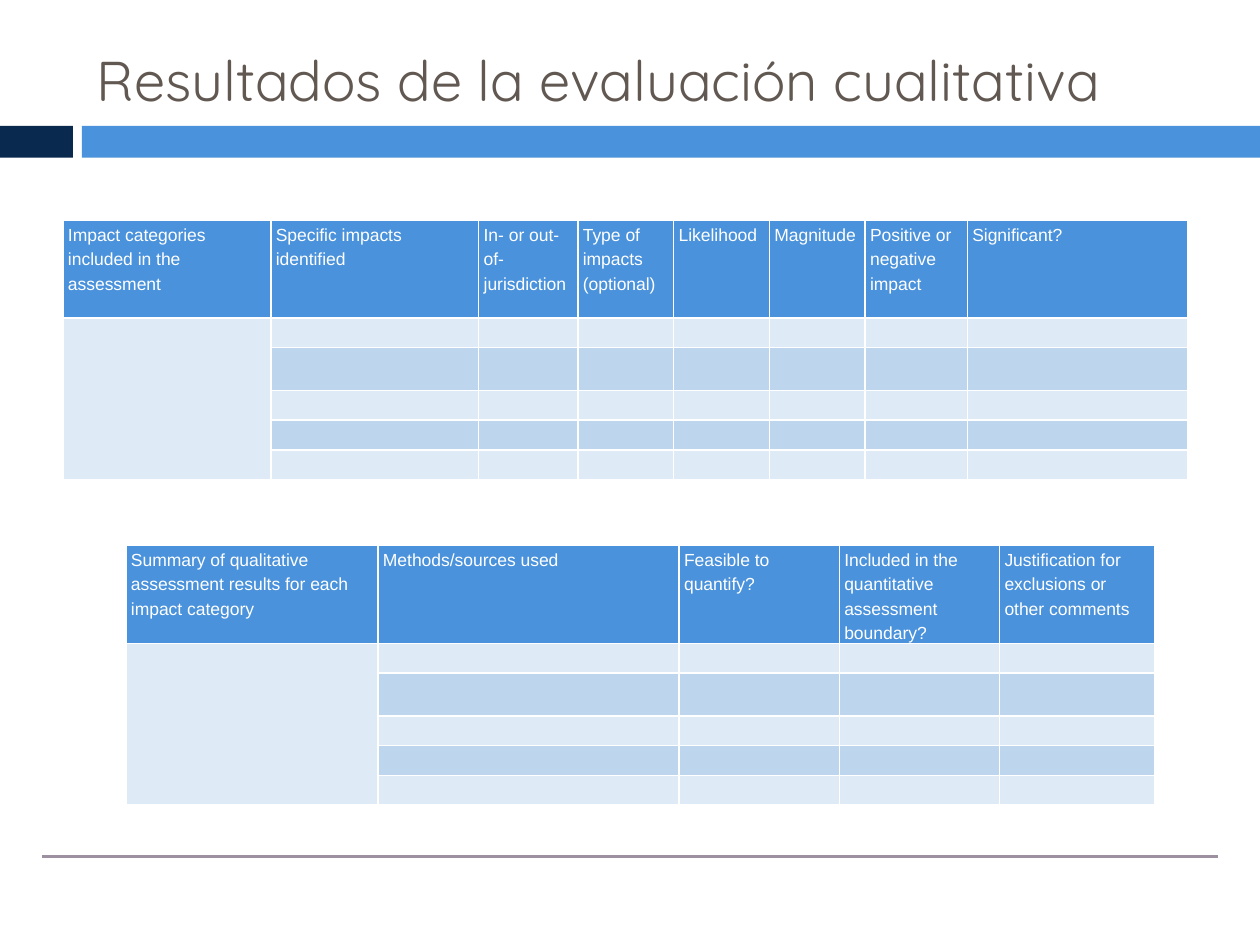
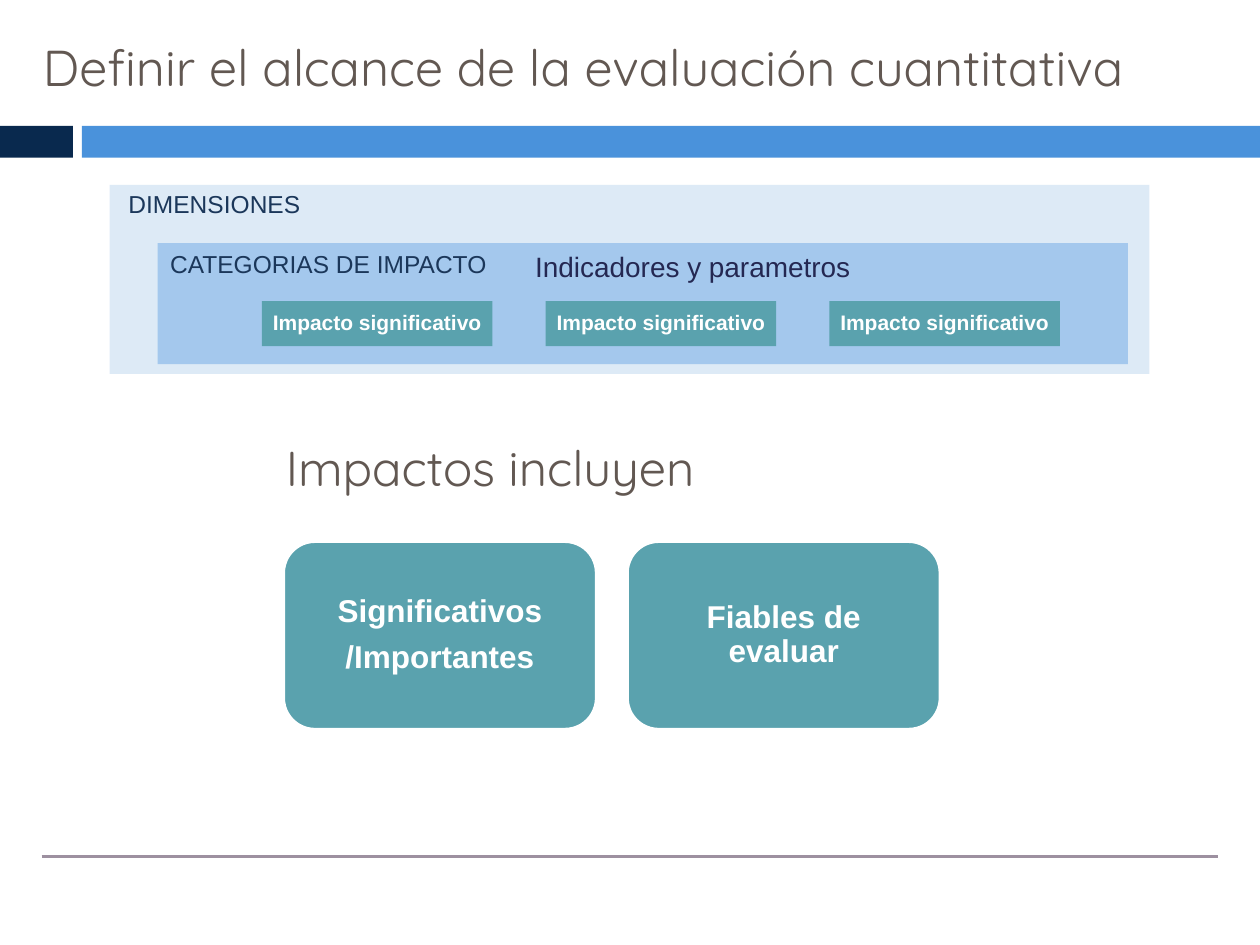
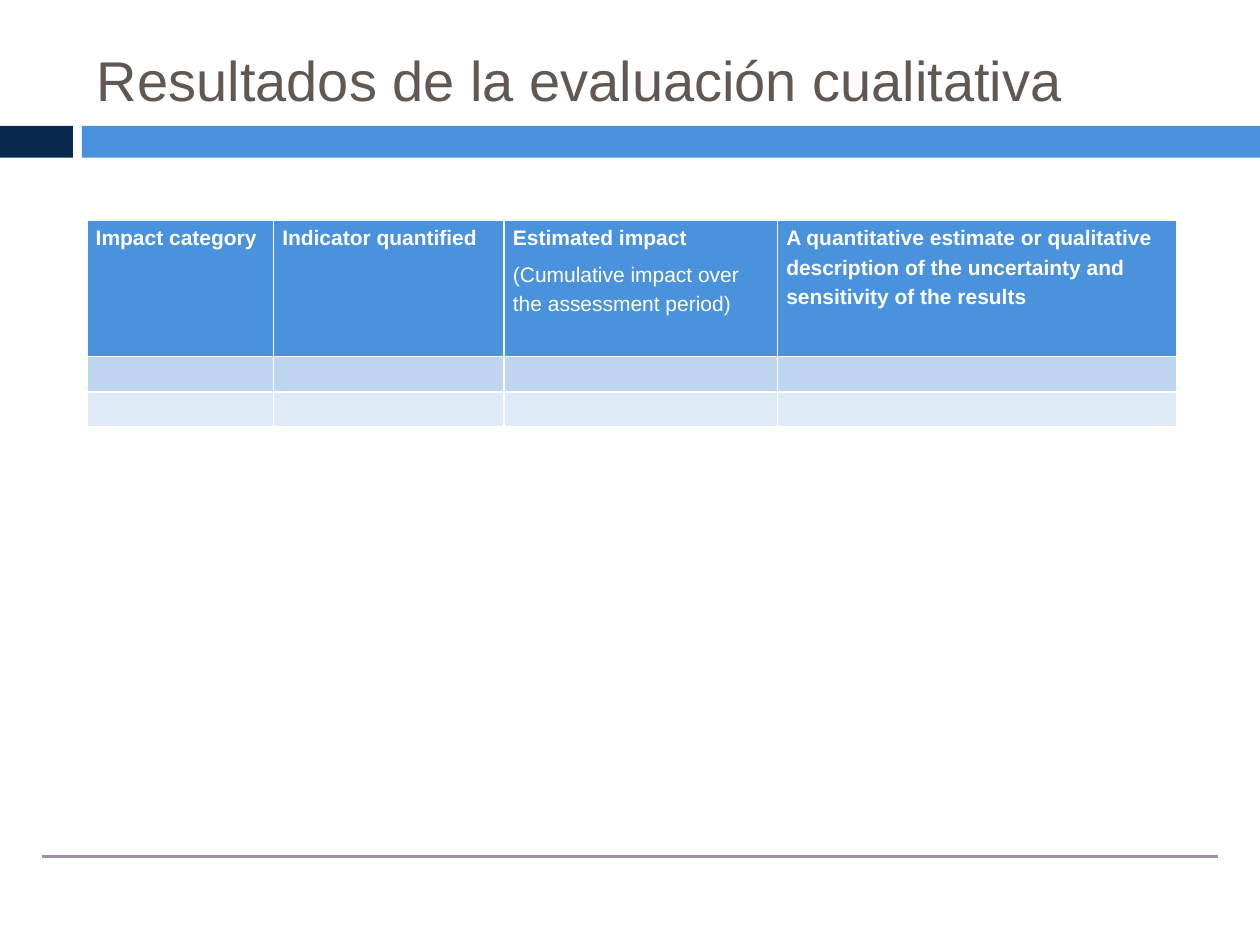
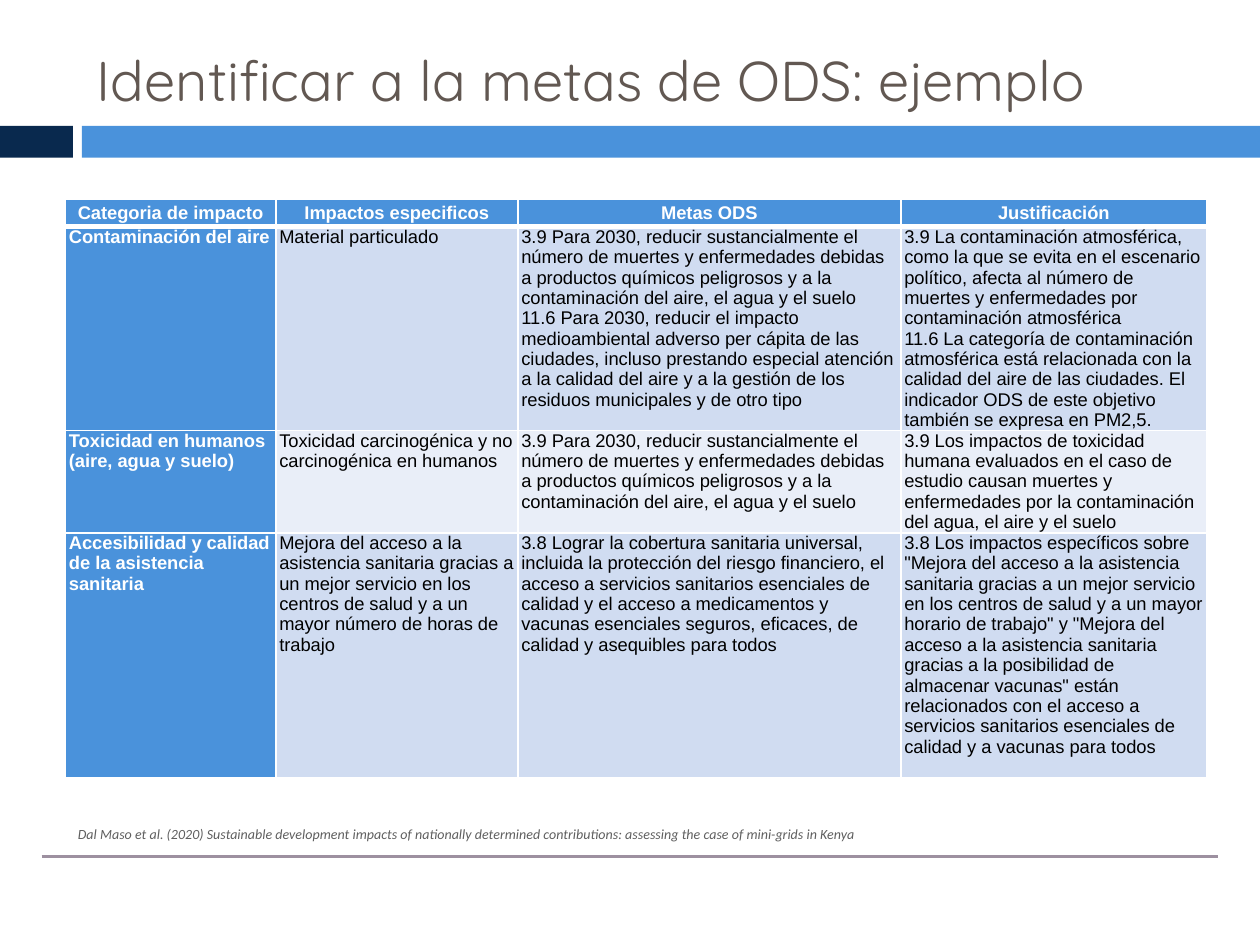
import pptx
import pptx.dml.color
import pptx.enum.shapes
import pptx.enum.text
import pptx.oxml
import pptx.oxml.ns
import pptx.util

Cm = pptx.util.Cm
Pt = pptx.util.Pt
Shape = pptx.enum.shapes.MSO_SHAPE
Align = pptx.enum.text.PP_ALIGN
Anchor = pptx.enum.text.MSO_ANCHOR
Fit = pptx.enum.text.MSO_AUTO_SIZE
qn = pptx.oxml.ns.qn

NAVY, BLUE, SKY, TEAL = "09294E", "4A92DB", "A4C8ED", "5AA2AE"
PALE, MID = "DEEAF6", "BDD6EE"
LILAC, FAINT = "D0DCF1", "E9EEF8"
WHITE, BLACK, BROWN, MAUVE = "FFFFFF", "000000", "625852", "9D90A0"
INK, DEEP, GREY = "1B375A", "242852", "5F5F5F"
SANS, ROUND = "Arial", "Quicksand"


def tint(code):
    return pptx.dml.color.RGBColor.from_string(code)


class Deck:
    def __init__(self):
        self.show = pptx.Presentation()
        self.show.slide_width, self.show.slide_height = Cm(25.4), Cm(19.05)
        self.page = None

    def slide(self, title, face=ROUND, size=32, spot=(1.7, 0.79, 22.66, 1.63)):
        self.page = self.show.slides.add_slide(self.show.slide_layouts[5])
        self.shape(0, 2.54, 1.47, 0.64, NAVY)
        self.shape(1.65, 2.54, 23.75, 0.64, BLUE)
        self.rule(0.84, 24.56, 17.27)
        head = self.page.shapes.title
        head.left, head.top, head.width, head.height = map(Cm, spot)
        head.text_frame.auto_size = Fit.NONE
        head.text_frame.vertical_anchor = Anchor.MIDDLE
        self.put(head.text_frame, title, size, BROWN, face=face)

    def put(self, frame, text, size, color, face=SANS, bold=False,
            slant=False, align=Align.LEFT, lead=None, before=0, after=0):
        frame.word_wrap = True
        frame.text = text
        for rank, para in enumerate(frame.paragraphs):
            para.alignment = align
            para.line_spacing = lead
            para.space_before = Pt(before if rank else 0)
            para.space_after = Pt(after)
            font = para.font
            font.name, font.size = face, Pt(size)
            font.bold, font.italic = bold, slant
            font.color.rgb = tint(color)

    def shape(self, left, top, width, height, fill, kind=Shape.RECTANGLE,
              edge=None, alpha=None):
        item = self.page.shapes.add_shape(
            kind, Cm(left), Cm(top), Cm(width), Cm(height))
        item.shadow.inherit = False
        item.fill.solid()
        item.fill.fore_color.rgb = tint(fill)
        if alpha:
            paint = item._element.spPr.find(".//" + qn("a:srgbClr"))
            paint.append(pptx.oxml.parse_xml(
                f'<a:alpha {pptx.oxml.ns.nsdecls("a")} val="{alpha * 1000}"/>'))
        if edge:
            item.line.color.rgb = tint(edge)
            item.line.width = Pt(1.5)
        else:
            item.line.fill.background()
        return item

    def block(self, left, top, width, height, text, size, pad, **look):
        item = self.shape(left, top, width, height, TEAL, **look)
        frame = item.text_frame
        frame.margin_left = frame.margin_right = Cm(pad)
        frame.margin_top = frame.margin_bottom = 0
        frame.vertical_anchor = Anchor.MIDDLE
        self.put(frame, text, size, WHITE, bold=True, align=Align.CENTER,
                 lead=0.9, after=7 if "\n" in text else 0)

    def label(self, left, top, width, height, text, size, color, **style):
        item = self.page.shapes.add_textbox(
            Cm(left), Cm(top), Cm(width), Cm(height))
        self.put(item.text_frame, text, size, color, **style)

    def rule(self, start, end, top):
        line = self.page.shapes.add_connector(
            pptx.enum.shapes.MSO_CONNECTOR.STRAIGHT,
            Cm(start), Cm(top), Cm(end), Cm(top))
        line.line.color.rgb = tint(MAUVE)
        line.line.width = Pt(1.75)
        line._element.spPr.append(pptx.oxml.parse_xml(
            f'<a:effectLst {pptx.oxml.ns.nsdecls("a")}/>'))

    def frame(self, cell, top, low):
        props = cell._tc.get_or_add_tcPr()
        for rank, (side, width) in enumerate(zip("LRTB", (1, 1, top, low))):
            props.insert(rank, pptx.oxml.parse_xml(
                f'<a:ln{side} {pptx.oxml.ns.nsdecls("a")} w="{Pt(width)}">'
                f'<a:solidFill><a:srgbClr val="{WHITE}"/></a:solidFill>'
                f'</a:ln{side}>'))

    def table(self, left, top, cols, rows, data, size, pad, bands,
              bold=False, lead=1.25, gap=2, side=False, thick=1):
        grid = self.page.shapes.add_table(
            len(rows), len(cols), Cm(left), Cm(top),
            Cm(sum(cols)), Cm(sum(rows))).table
        grid.first_row = grid.horz_banding = False
        for col, width in zip(grid.columns, cols):
            col.width = Cm(width)
        for row, height in zip(grid.rows, rows):
            row.height = Cm(height)
        for r in range(len(rows)):
            for c in range(len(cols)):
                cell = grid.cell(r, c)
                head = r == 0 or side and c == 0
                cell.margin_left = cell.margin_right = Cm(pad)
                cell.margin_top = cell.margin_bottom = 0
                cell.fill.solid()
                cell.fill.fore_color.rgb = tint(
                    BLUE if head else bands[(r - 1) % 2])
                self.frame(cell, thick if r == 1 else 1, thick if r == 0 else 1)
                middle = side and r == 0
                cell.vertical_anchor = Anchor.MIDDLE if middle else Anchor.TOP
                self.put(cell.text_frame, data[r][c] if r < len(data) else "",
                         size, WHITE if head else BLACK, bold=bold and head,
                         align=Align.CENTER if middle else Align.LEFT,
                         lead=lead, before=gap, after=gap)
        return grid


def results(deck):
    deck.slide("Resultados de la evaluación cualitativa")
    rows = [1.96, 0.6, 0.86, 0.6, 0.6, 0.6]
    forms = [
        (1.27, 4.45, [4.19, 4.19, 2, 1.93, 1.93, 1.93, 2.06, 4.44],
         ["Impact categories included in the assessment",
          "Specific impacts identified", "In- or out-of-jurisdiction",
          "Type of impacts (optional)", "Likelihood", "Magnitude",
          "Positive or negative impact", "Significant?"]),
        (2.54, 11, [5.08, 6.07, 3.23, 3.23, 3.12],
         ["Summary of qualitative assessment results for each impact category",
          "Methods/sources used", "Feasible to quantify?",
          "Included in the quantitative assessment boundary?",
          "Justification for exclusions or other comments"]),
    ]
    for left, top, cols, heads in forms:
        grid = deck.table(left, top, cols, rows, [heads], 10, 0.1, (PALE, MID))
        grid.cell(1, 0).merge(grid.cell(len(rows) - 1, 0))


def scope(deck):
    deck.slide("Definir el alcance de la evaluación cuantitativa",
               size=28.8, spot=(0.61, 0.53, 24.79, 1.63))
    deck.label(0, 8.69, 19.76, 1.6, "Impactos incluyen", 28, BROWN,
               face=ROUND, align=Align.CENTER)
    for rank, text in enumerate(["Significativos\n/Importantes",
                                 "Fiables de evaluar"]):
        deck.block(5.72 + 6.93 * rank, 10.92, 6.3, 3.78, text, 18, 0.3,
                   kind=Shape.ROUNDED_RECTANGLE, edge=WHITE)
    deck.shape(2.21, 3.73, 20.96, 3.81, MID, alpha=50)
    deck.label(2.34, 3.68, 12.93, 1, "DIMENSIONES", 14, INK)
    deck.shape(3.18, 4.9, 19.56, 2.44, SKY)
    deck.label(3.18, 4.9, 9.17, 1, "CATEGORIAS DE IMPACTO", 14, INK)
    for rank in range(3):
        deck.block(5.28 + 5.72 * rank, 6.07, 4.65, 0.91,
                   "Impacto significativo", 12, 0.1)
    deck.label(10.54, 4.9, 6.96, 0.94, "Indicadores y parametros", 16, DEEP)


def summary(deck):
    deck.slide("Resultados de la evaluación cualitativa", face=SANS)
    heads = [
        "Impact category", "Indicator quantified",
        "Estimated impact\n(Cumulative impact over the assessment period)",
        "A quantitative estimate or qualitative description of the "
        "uncertainty and sensitivity of the results"]
    grid = deck.table(1.75, 4.45, [3.76, 4.65, 5.51, 8.05],
                      [2.74, 0.71, 0.71], [heads], 12, 0.18, (MID, PALE),
                      bold=True)
    grid.cell(0, 2).text_frame.paragraphs[1].font.bold = False


def goals(deck):
    deck.slide("Identificar a la metas de ODS: ejemplo")
    deaths = ("3.9 Para 2030, reducir sustancialmente el número de muertes y "
              "enfermedades debidas a productos químicos peligrosos y a la "
              "contaminación del aire, el agua y el suelo")
    data = [
        ["Categoria de impacto", "Impactos especificos", "Metas ODS",
         "Justificación"],
        ["Contaminación del aire", "Material particulado",
         deaths + "\n11.6 Para 2030, reducir el impacto medioambiental adverso "
         "per cápita de las ciudades, incluso prestando especial atención a "
         "la calidad del aire y a la gestión de los residuos municipales y "
         "de otro tipo",
         "3.9 La contaminación atmosférica, como la que se evita en el "
         "escenario político, afecta al número de muertes y enfermedades por "
         "contaminación atmosférica\n11.6 La categoría de contaminación "
         "atmosférica está relacionada con la calidad del aire de las "
         "ciudades. El indicador ODS de este objetivo también se expresa en "
         "PM2,5."],
        ["Toxicidad en humanos (aire, agua y suelo)",
         "Toxicidad carcinogénica y no carcinogénica en humanos", deaths,
         "3.9 Los impactos de toxicidad humana evaluados en el caso de "
         "estudio causan muertes y enfermedades por la contaminación del "
         "agua, el aire y el suelo"],
        ["Accesibilidad y calidad de la asistencia sanitaria",
         "Mejora del acceso a la asistencia sanitaria gracias a un mejor "
         "servicio en los centros de salud y a un mayor número de horas de "
         "trabajo",
         "3.8 Lograr la cobertura sanitaria universal, incluida la protección "
         "del riesgo financiero, el acceso a servicios sanitarios esenciales "
         "de calidad y el acceso a medicamentos y vacunas esenciales seguros, "
         "eficaces, de calidad y asequibles para todos",
         '3.8 Los impactos específicos sobre "Mejora del acceso a la '
         "asistencia sanitaria gracias a un mejor servicio en los centros de "
         'salud y a un mayor horario de trabajo" y "Mejora del acceso a la '
         "asistencia sanitaria gracias a la posibilidad de almacenar "
         'vacunas" están relacionados con el acceso a servicios sanitarios '
         "esenciales de calidad y a vacunas para todos"],
    ]
    deck.table(1.32, 4.01, [4.24, 4.88, 7.72, 6.17], [0.56, 4.09, 2.06, 4.93],
               data, 10.5, 0.07, (LILAC, FAINT), bold=True, lead=None, gap=0,
               side=True, thick=3)
    deck.label(1.32, 16.51, 17.73, 0.61,
               "Dal Maso et al. (2020) Sustainable development impacts of "
               "nationally determined contributions: assessing the case of "
               "mini-grids in Kenya", 8, GREY, face="Calibri", slant=True)


def main():
    deck = Deck()
    for build in (results, scope, summary, goals):
        build(deck)
    deck.show.save("out.pptx")


if __name__ == "__main__":
    main()
